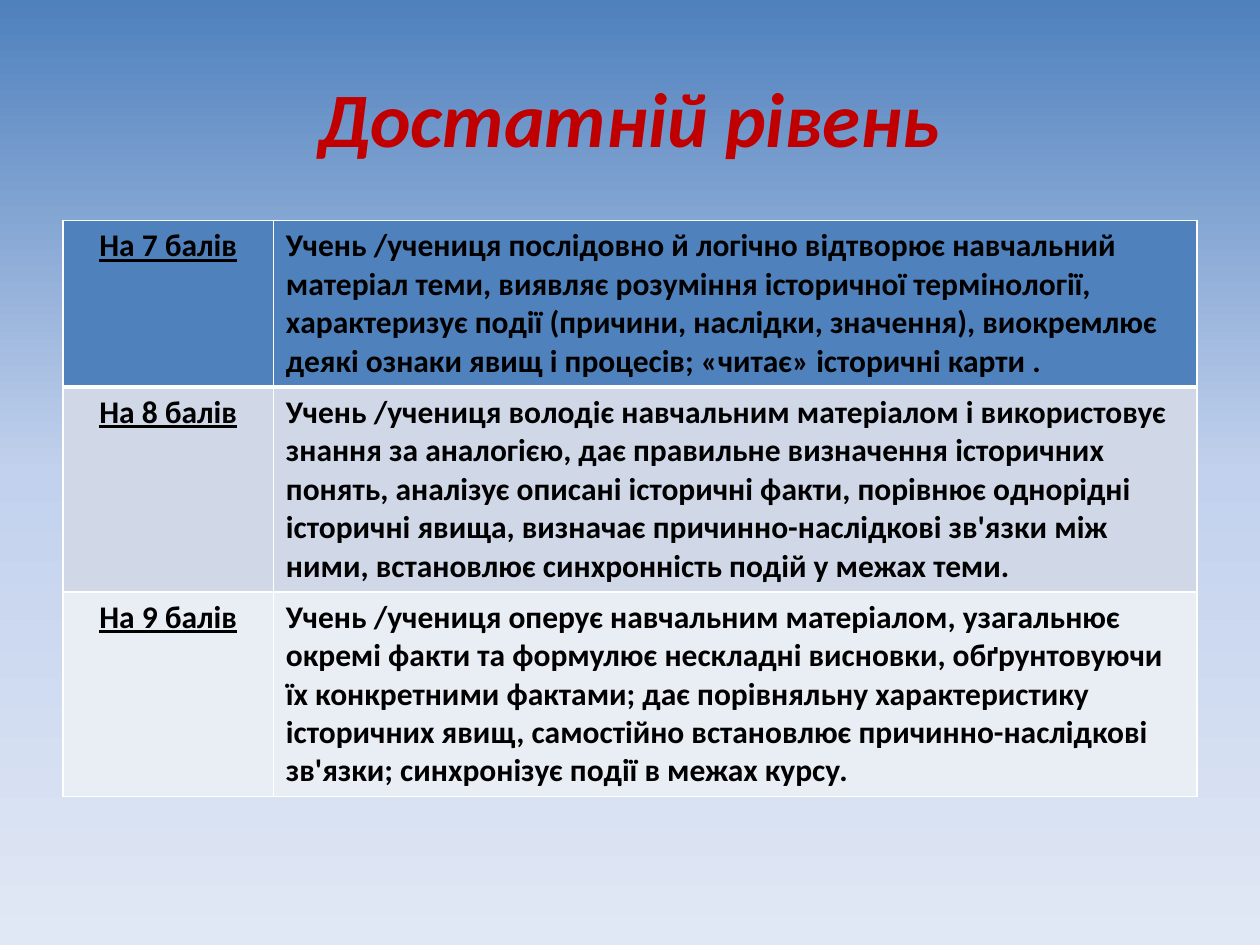
from typing import NamedTuple

from lxml import etree
from pptx import Presentation
from pptx.dml.color import RGBColor
from pptx.enum.text import MSO_ANCHOR, PP_ALIGN
from pptx.oxml.ns import qn
from pptx.util import Inches, Pt

CENTER, LEFT = PP_ALIGN.CENTER, PP_ALIGN.LEFT
MIDDLE = MSO_ANCHOR.MIDDLE
FONT = "Calibri"
TITLE_ONLY = 5

BLUE = RGBColor(0x4F, 0x81, 0xBD)
MID_BLUE = RGBColor(0xC2, 0xD1, 0xED)
PALE_BLUE = RGBColor(0xE1, 0xE8, 0xF5)
BAND_DARK = RGBColor(0xD0, 0xD8, 0xE8)
BAND_LIGHT = RGBColor(0xE9, 0xED, 0xF4)
RED = RGBColor(0xC0, 0x00, 0x00)
BLACK = RGBColor(0x00, 0x00, 0x00)
WHITE = RGBColor(0xFF, 0xFF, 0xFF)

BACKGROUND_STOPS = ((0, BLUE), (50, MID_BLUE), (100, PALE_BLUE))
COLUMN_WIDTHS = (1.67, 7.33)
THIN, THICK = 1, 3


class Grade(NamedTuple):
    score: str
    criteria: str
    fill: RGBColor
    height: float
    top_line: int
    bottom_line: int


GRADES = (
    Grade(
        "На 7 балів",
        "Учень /учениця послідовно й логічно відтворює навчальний матеріал теми, "
        "виявляє розуміння історичної термінології, характеризує події (причини, "
        "наслідки, значення), виокремлює деякі ознаки явищ і процесів; «читає» "
        "історичні карти .",
        BLUE, 1.32, THIN, THICK,
    ),
    Grade(
        "На 8 балів",
        "Учень /учениця володіє навчальним матеріалом і використовує знання за "
        "аналогією, дає правильне визначення історичних понять, аналізує описані "
        "історичні факти, порівнює однорідні історичні явища, визначає "
        "причинно-наслідкові зв'язки між ними, встановлює синхронність подій у "
        "межах теми.",
        BAND_DARK, 1.62, THICK, THIN,
    ),
    Grade(
        "На 9 балів",
        "Учень /учениця оперує навчальним матеріалом, узагальнює окремі факти та "
        "формулює нескладні висновки, обґрунтовуючи їх конкретними фактами; дає "
        "порівняльну характеристику історичних явищ, самостійно встановлює "
        "причинно-наслідкові зв'язки; синхронізує події в межах курсу.",
        BAND_LIGHT, 1.62, THIN, THIN,
    ),
)


def add_color(parent, color: RGBColor) -> None:
    etree.SubElement(parent, qn("a:srgbClr"), val=str(color))


def paint_background(slide) -> None:
    fill = slide.background.fill
    fill.gradient()
    fill.gradient_angle = 270
    stops = next(slide.element.iter(qn("a:gsLst")))
    for stop in list(stops):
        stops.remove(stop)
    for percent, color in BACKGROUND_STOPS:
        add_color(etree.SubElement(stops, qn("a:gs"), pos=str(percent * 1000)), color)


def add_title(slide, text: str) -> None:
    title = slide.shapes.title
    title.left, title.top = Inches(0.5), Inches(0.3)
    title.width, title.height = Inches(9), Inches(1.25)
    title.text_frame.vertical_anchor = MIDDLE
    paragraph = title.text_frame.paragraphs[0]
    paragraph.text = text
    paragraph.alignment = CENTER
    font = paragraph.font
    font.name, font.size, font.color.rgb = FONT, Pt(44), RED
    font.bold = font.italic = True


def set_borders(cell, top: int, bottom: int) -> None:
    """Draw white cell borders; must run before the cell is filled."""
    properties = cell._tc.get_or_add_tcPr()
    for side, width in (("L", THIN), ("R", THIN), ("T", top), ("B", bottom)):
        line = etree.SubElement(properties, qn(f"a:ln{side}"), w=str(Pt(width)))
        add_color(etree.SubElement(line, qn("a:solidFill")), WHITE)


def fill_cell(cell, text: str, grade: Grade, is_score: bool) -> None:
    set_borders(cell, grade.top_line, grade.bottom_line)
    cell.fill.solid()
    cell.fill.fore_color.rgb = grade.fill
    paragraph = cell.text_frame.paragraphs[0]
    paragraph.text = text
    paragraph.alignment = CENTER if is_score else LEFT
    font = paragraph.font
    font.name, font.size, font.color.rgb = FONT, Pt(18), BLACK
    font.bold, font.underline = True, is_score


def add_grade_table(slide) -> None:
    table = slide.shapes.add_table(
        len(GRADES), len(COLUMN_WIDTHS), Inches(0.5), Inches(1.75),
        Inches(sum(COLUMN_WIDTHS)), Inches(sum(grade.height for grade in GRADES)),
    ).table
    for column, width in zip(table.columns, COLUMN_WIDTHS):
        column.width = Inches(width)
    for index, grade in enumerate(GRADES):
        table.rows[index].height = Inches(grade.height)
        fill_cell(table.cell(index, 0), grade.score, grade, True)
        fill_cell(table.cell(index, 1), grade.criteria, grade, False)


def main() -> None:
    presentation = Presentation()
    presentation.slide_width, presentation.slide_height = Inches(10), Inches(7.5)
    slide = presentation.slides.add_slide(presentation.slide_layouts[TITLE_ONLY])
    paint_background(slide)
    add_title(slide, "Достатній рівень")
    add_grade_table(slide)
    presentation.save("out.pptx")


if __name__ == "__main__":
    main()
